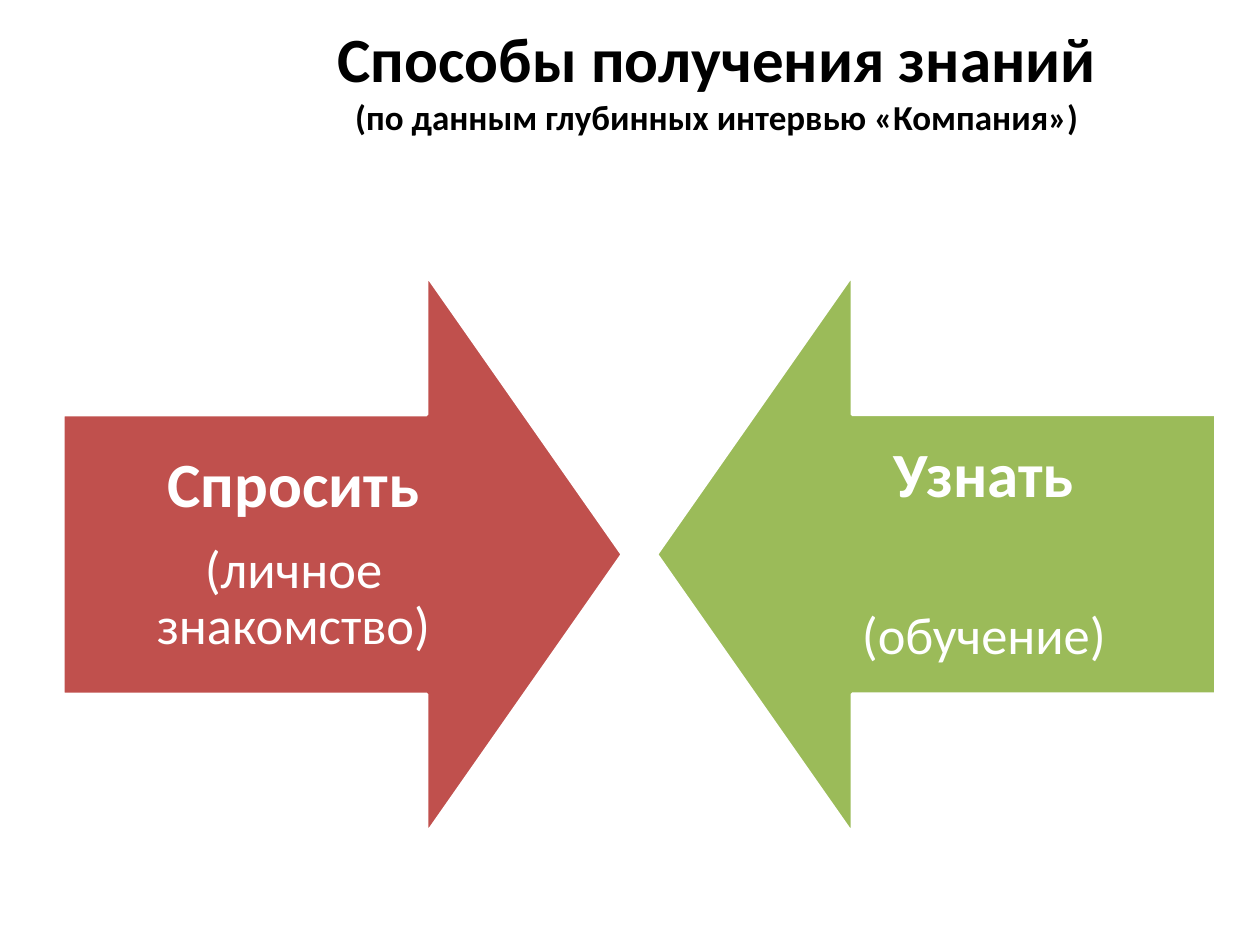
import dataclasses

import pptx
import pptx.dml.color
import pptx.enum.shapes
import pptx.enum.text
import pptx.util

Inches = pptx.util.Inches
Pt = pptx.util.Pt
Color = pptx.dml.color.RGBColor.from_string


@dataclasses.dataclass
class Theme:
    font: str = "Calibri"
    ink: str = "000000"
    paper: str = "FFFFFF"
    red: str = "C0504D"
    green: str = "9BBB59"
    head: int = 36
    note: int = 30
    sub: int = 20
    edge: int = 2


class Deck:
    def __init__(self, theme):
        self.theme = theme
        self.file = pptx.Presentation()
        self.file.slide_width = Inches(10)
        self.file.slide_height = Inches(7.5)
        self.slide = self.file.slides.add_slide(self.file.slide_layouts[6])

    def run(self, para, text, size, color, bold):
        run = para.add_run()
        run.text = text
        run.font.name = self.theme.font
        run.font.size = Pt(size)
        run.font.bold = bold
        run.font.color.rgb = Color(color)

    def frame(self, left, top, width, height):
        """Add a wrapped text box, centred vertically, and return its frame."""
        box = self.slide.shapes.add_textbox(
            Inches(left), Inches(top), Inches(width), Inches(height))
        frame = box.text_frame
        frame.word_wrap = True
        frame.vertical_anchor = pptx.enum.text.MSO_ANCHOR.MIDDLE
        return frame

    def title(self, text, sub):
        para = self.frame(1.38, 0, 8.62, 1.25).paragraphs[0]
        para.alignment = pptx.enum.text.PP_ALIGN.CENTER
        self.run(para, text, self.theme.head, self.theme.ink, True)
        para.add_line_break()
        self.run(para, sub, self.theme.sub, self.theme.ink, True)

    def arrow(self, left, top, size, turn, color):
        arrow = self.slide.shapes.add_shape(
            pptx.enum.shapes.MSO_SHAPE.DOWN_ARROW,
            Inches(left), Inches(top), Inches(size), Inches(size))
        arrow.rotation = turn
        arrow.adjustments[0] = 0.5
        arrow.adjustments[1] = 0.35
        arrow.shadow.inherit = False
        arrow.fill.solid()
        arrow.fill.fore_color.rgb = Color(color)
        arrow.line.color.rgb = Color(self.theme.paper)
        arrow.line.width = Pt(self.theme.edge)

    def label(self, left, top, width, height, head, note, gap):
        """Write a bold word and, gap points below it, a plain note."""
        frame = self.frame(left, top, width, height)
        frame.margin_left = frame.margin_right = Inches(0.28)
        frame.margin_top = frame.margin_bottom = Inches(0.28)
        lines = [(head, self.theme.head, True, gap),
                 (note, self.theme.note, False, 10.5)]
        for row, (text, size, bold, after) in enumerate(lines):
            para = frame.add_paragraph() if row else frame.paragraphs[0]
            para.alignment = pptx.enum.text.PP_ALIGN.CENTER
            para.line_spacing = 0.9
            para.space_after = Pt(after)
            self.run(para, text, size, self.theme.paper, bold)


def main():
    theme = Theme()
    deck = Deck(theme)
    deck.title("Способы получения знаний",
               "(по данным глубинных интервью «Компания»)")

    size, top, wide = 4.44, 2.18, 3.66
    sides = [
        (0.5, 0.5, 270, theme.red, "Спросить", "(личное знакомство)", 12.6),
        (5.21, 5.98, 90, theme.green, "Узнать", "(обучение)", 56),
    ]
    for left, inner, turn, color, head, note, gap in sides:
        deck.arrow(left, top, size, turn, color)
        deck.label(inner, top + size / 4, wide, size / 2, head, note, gap)

    deck.file.save("out.pptx")


if __name__ == "__main__":
    main()
